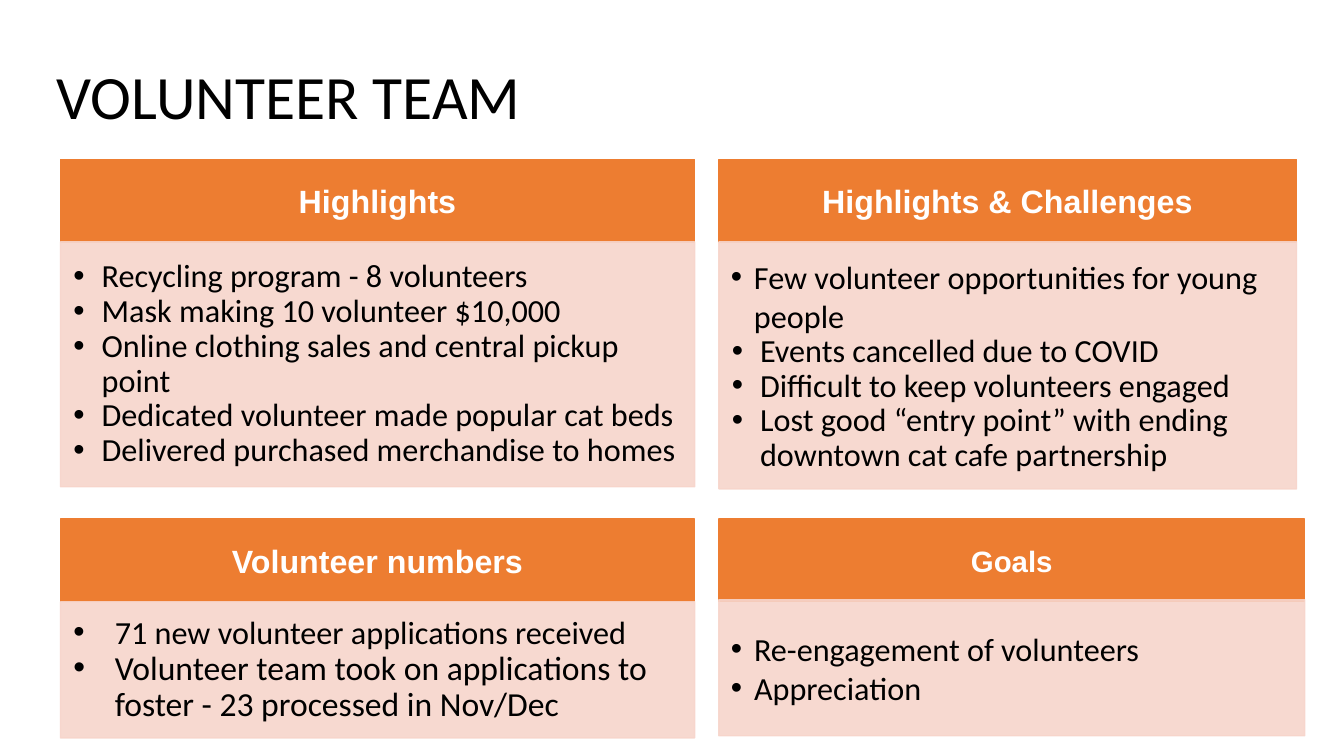
from dataclasses import dataclass

import pptx
import pptx.dml.color
import pptx.enum.shapes
import pptx.enum.text
import pptx.oxml
import pptx.oxml.ns
import pptx.util
from pptx.util import Inches


@dataclass(frozen=True)
class Theme:
    accent: str = "ED7D31"
    tint: str = "F7D5CB"
    tint_alpha: int = 89
    dark: str = "000000"
    light: str = "FFFFFF"
    heading_font: str = "Arial"
    body_font: str = "Calibri"
    title_size: int = 44
    heading_size: int = 23
    small_heading_size: int = 21
    body_size: int = 23
    large_body_size: int = 24


THEME = Theme()
HEADER_HEIGHT = 0.82

# Bullet styles: left margin, hanging indent, line spacing
TIGHT = (0.31, -0.28, 0.9)
WIDE = (0.44, -0.41, 0.9)
PLAIN = (0.25, -0.23, 1.0)

# Each panel: heading, heading size, left, top, width, body top, body height,
# and bullets as (text, style, size)
PANELS = [
    ("Volunteer numbers", THEME.heading_size, 0.6, 5.15, 6.29, 5.97, 1.35, [
        ("71 new volunteer applications received", WIDE, THEME.body_size),
        ("Volunteer team took on applications to foster - 23 processed in Nov/Dec",
         WIDE, THEME.large_body_size),
    ]),
    ("Highlights & Challenges", THEME.heading_size, 7.13, 1.58, 5.73, 2.4, 2.45, [
        ("Few volunteer opportunities for young people", PLAIN, THEME.body_size),
        ("Events cancelled due to COVID", TIGHT, THEME.body_size),
        ("Difficult to keep volunteers engaged", TIGHT, THEME.body_size),
        ("Lost good “entry point” with ending downtown cat cafe partnership",
         TIGHT, THEME.body_size),
    ]),
    ("Goals", THEME.small_heading_size, 7.13, 5.15, 5.81, 5.95, 1.35, [
        ("Re-engagement of volunteers", PLAIN, THEME.body_size),
        ("Appreciation", PLAIN, THEME.body_size),
    ]),
    ("Highlights", THEME.heading_size, 0.6, 1.58, 6.29, 2.4, 2.43, [
        (text, TIGHT, THEME.body_size) for text in (
            "Recycling program - 8 volunteers",
            "Mask making 10 volunteer $10,000",
            "Online clothing sales and central pickup point",
            "Dedicated volunteer made popular cat beds",
            "Delivered purchased merchandise to homes",
        )
    ]),
]


def rgb(value):
    return pptx.dml.color.RGBColor.from_string(value)


def set_attributes(target, values):
    for name, value in values.items():
        setattr(target, name, value)


def add_run(paragraph, text, font, size, color, bold=False):
    run = paragraph.add_run()
    run.text = text
    set_attributes(run.font, {"name": font, "size": pptx.util.Pt(size), "bold": bold})
    run.font.color.rgb = rgb(color)


def set_alpha(fill_format, percent):
    """Make a solid fill partly transparent."""
    color = fill_format._xPr.find(".//" + pptx.oxml.ns.qn("a:srgbClr"))
    color.append(pptx.oxml.parse_xml(
        f'<a:alpha {pptx.oxml.ns.nsdecls("a")} val="{percent * 1000}"/>'))


def add_box(slide, left, top, width, height, color, alpha=None):
    shape = slide.shapes.add_shape(
        pptx.enum.shapes.MSO_SHAPE.RECTANGLE,
        Inches(left), Inches(top), Inches(width), Inches(height))
    shape.shadow.inherit = False
    shape.line.width = pptx.util.Pt(1)
    for fill in (shape.fill, shape.line.fill):
        fill.solid()
        fill.fore_color.rgb = rgb(color)
        if alpha is not None:
            set_alpha(fill, alpha)
    margin = Inches(0.1)
    set_attributes(shape.text_frame, {
        "word_wrap": True,
        "vertical_anchor": pptx.enum.text.MSO_ANCHOR.MIDDLE,
        "margin_left": margin, "margin_right": margin,
        "margin_top": margin, "margin_bottom": margin,
    })
    return shape


def add_bullet(paragraph, text, style, size):
    left, indent, spacing = style
    properties = paragraph._p.get_or_add_pPr()
    properties.set("marL", str(Inches(left)))
    properties.set("indent", str(Inches(indent)))
    namespace = pptx.oxml.ns.nsdecls("a")
    for xml in (
        f'<a:buClr {namespace}><a:srgbClr val="{THEME.dark}"/></a:buClr>',
        f'<a:buFont {namespace} typeface="Arial"/>',
        f'<a:buChar {namespace} char="•"/>',
    ):
        properties.append(pptx.oxml.parse_xml(xml))
    set_attributes(paragraph, {
        "level": 1,
        "alignment": pptx.enum.text.PP_ALIGN.LEFT,
        "line_spacing": spacing,
    })
    add_run(paragraph, text, THEME.body_font, size, THEME.dark)


def add_panel(slide, heading, heading_size, left, top, width,
              body_top, body_height, bullets):
    # Header bar
    header = add_box(slide, left, top, width, HEADER_HEIGHT, THEME.accent)
    paragraph = header.text_frame.paragraphs[0]
    paragraph.alignment = pptx.enum.text.PP_ALIGN.CENTER
    add_run(paragraph, heading, THEME.heading_font, heading_size, THEME.light, bold=True)

    # Bulleted body
    body = add_box(slide, left, body_top, width, body_height,
                   THEME.tint, THEME.tint_alpha)
    for index, bullet in enumerate(bullets):
        frame = body.text_frame
        paragraph = frame.add_paragraph() if index else frame.paragraphs[0]
        add_bullet(paragraph, *bullet)


def set_title(slide, text):
    title = slide.shapes.title
    set_attributes(title, {
        "left": Inches(0.46), "top": Inches(0.26),
        "width": Inches(11.5), "height": Inches(1.45),
    })
    set_attributes(title.text_frame, {
        "word_wrap": True,
        "vertical_anchor": pptx.enum.text.MSO_ANCHOR.MIDDLE,
        "margin_left": Inches(0.1), "margin_right": Inches(0.1),
        "margin_top": Inches(0.05), "margin_bottom": Inches(0.05),
    })
    paragraph = title.text_frame.paragraphs[0]
    set_attributes(paragraph, {
        "alignment": pptx.enum.text.PP_ALIGN.LEFT, "line_spacing": 0.9})
    add_run(paragraph, text, THEME.body_font, THEME.title_size, THEME.dark)


def main():
    presentation = pptx.Presentation()
    presentation.slide_width = Inches(13.33)
    presentation.slide_height = Inches(7.5)
    slide = presentation.slides.add_slide(presentation.slide_layouts[5])
    set_title(slide, "VOLUNTEER TEAM")
    for panel in PANELS:
        add_panel(slide, *panel)
    presentation.save("out.pptx")


if __name__ == "__main__":
    main()
